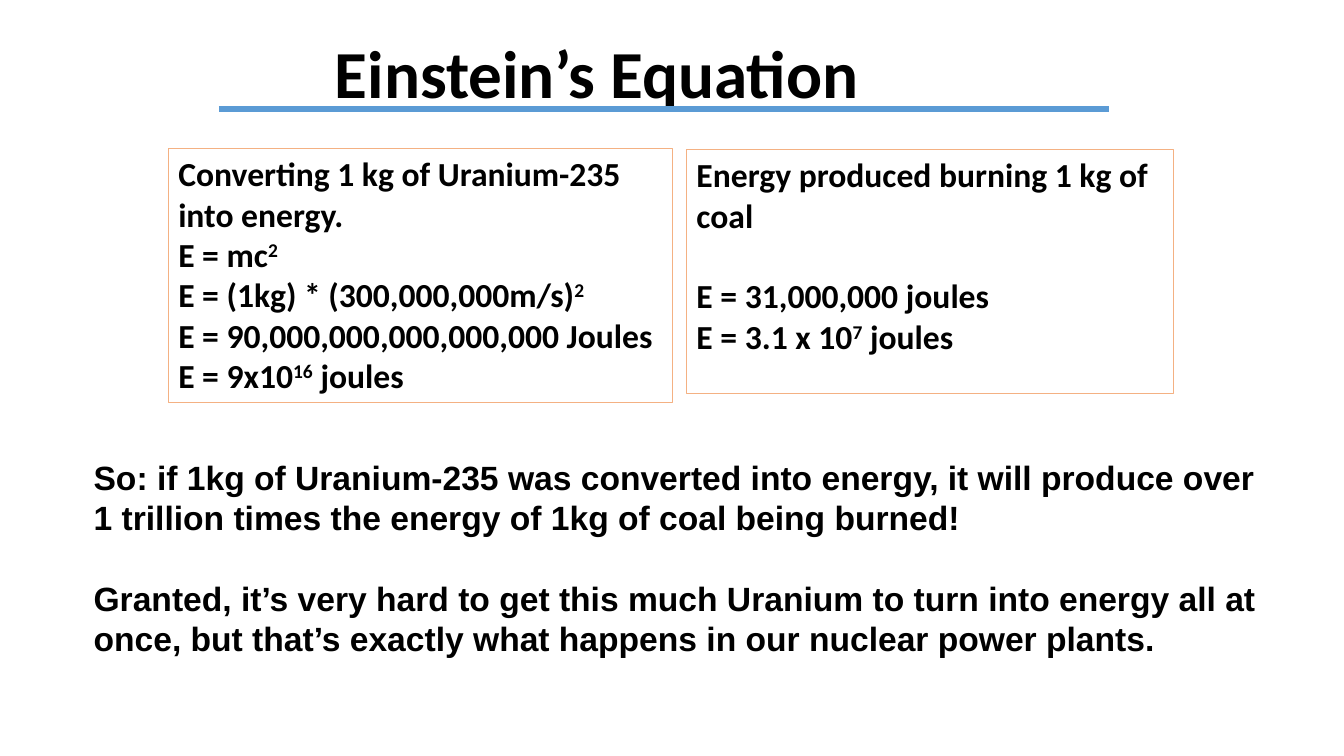
from dataclasses import dataclass

from lxml import etree
from pptx import Presentation
from pptx.dml.color import RGBColor
from pptx.enum.shapes import MSO_CONNECTOR, MSO_SHAPE
from pptx.enum.text import MSO_ANCHOR, MSO_AUTO_SIZE, PP_ALIGN
from pptx.oxml.ns import qn
from pptx.util import Inches, Pt

RECTANGLE = MSO_SHAPE.RECTANGLE
STRAIGHT = MSO_CONNECTOR.STRAIGHT
TOP, BOTTOM = MSO_ANCHOR.TOP, MSO_ANCHOR.BOTTOM
LEFT, CENTER = PP_ALIGN.LEFT, PP_ALIGN.CENTER
FIXED_SIZE = MSO_AUTO_SIZE.NONE


@dataclass(frozen=True)
class Theme:
    ink: RGBColor = RGBColor(0x00, 0x00, 0x00)
    rule: RGBColor = RGBColor(0x5B, 0x9B, 0xD5)
    border: RGBColor = RGBColor(0xF4, 0xB1, 0x83)
    title_size: Pt = Pt(48)
    text_size: Pt = Pt(24)
    line_gap: Pt = Pt(29)
    equation_font: str = "Calibri"
    prose_font: str = "Arial"


theme = Theme()


def write(frame, lines, *, font, size=theme.text_size, align=LEFT, anchor=TOP,
          spacing=1.0, gap_before=None):
    frame.word_wrap = True
    frame.auto_size = FIXED_SIZE
    frame.vertical_anchor = anchor
    for index, line in enumerate(lines):
        paragraph = frame.paragraphs[0] if index == 0 else frame.add_paragraph()
        paragraph.alignment = align
        paragraph.line_spacing = spacing
        if index == gap_before:
            paragraph.space_before = theme.line_gap
        for part, words in enumerate(line.split("^")):
            if not words:
                continue
            run = paragraph.add_run()
            run.text = words
            run.font.name = font
            run.font.size = size
            run.font.bold = True
            run.font.color.rgb = theme.ink
            if part % 2:
                run._r.get_or_add_rPr().set("baseline", "30000")


deck = Presentation()
deck.slide_width = Inches(13.33)
deck.slide_height = Inches(7.5)
slide = deck.slides.add_slide(deck.slide_layouts[5])

title = slide.shapes.title
title.left, title.top = Inches(1.92), Inches(0.25)
title.width, title.height = Inches(8), Inches(0.92)
write(title.text_frame, ["Einstein’s Equation"], font=theme.equation_font,
      size=theme.title_size, align=CENTER, anchor=BOTTOM, spacing=0.9)

underline = slide.shapes.add_connector(
    STRAIGHT, Inches(2.17), Inches(1.08), Inches(11), Inches(1.08))
underline.line.color.rgb = theme.rule
underline.line.width = Pt(4.5)
etree.SubElement(underline._element.spPr, qn("a:effectLst"))

energy_sources = [
    ((1.67, 1.47, 5, 2.52), None, [
        "Converting 1 kg of Uranium-235 into energy.",
        "E = mc^2^",
        "E = (1kg) * (300,000,000m/s)^2^",
        "E = 90,000,000,000,000,000 Joules",
        "E = 9x10^16^ joules",
    ]),
    ((6.81, 1.48, 4.83, 2.42), 1, [
        "Energy produced burning 1 kg of coal",
        "E = 31,000,000 joules",
        "E = 3.1 x 10^7^ joules",
    ]),
]
for place, gap_before, equations in energy_sources:
    panel = slide.shapes.add_shape(RECTANGLE, *map(Inches, place))
    panel.shadow.inherit = False
    panel.fill.background()
    panel.line.color.rgb = theme.border
    panel.line.width = Pt(0.75)
    write(panel.text_frame, equations, font=theme.equation_font,
          gap_before=gap_before)

conclusion = slide.shapes.add_textbox(
    Inches(0.83), Inches(4.48), Inches(11.79), Inches(2.42))
write(conclusion.text_frame, [
    "So: if 1kg of Uranium-235 was converted into energy, it will produce over "
    "1 trillion times the energy of 1kg of coal being burned!",
    "Granted, it’s very hard to get this much Uranium to turn into energy all at "
    "once, but that’s exactly what happens in our nuclear power plants.",
], font=theme.prose_font, gap_before=1)

deck.save("out.pptx")
